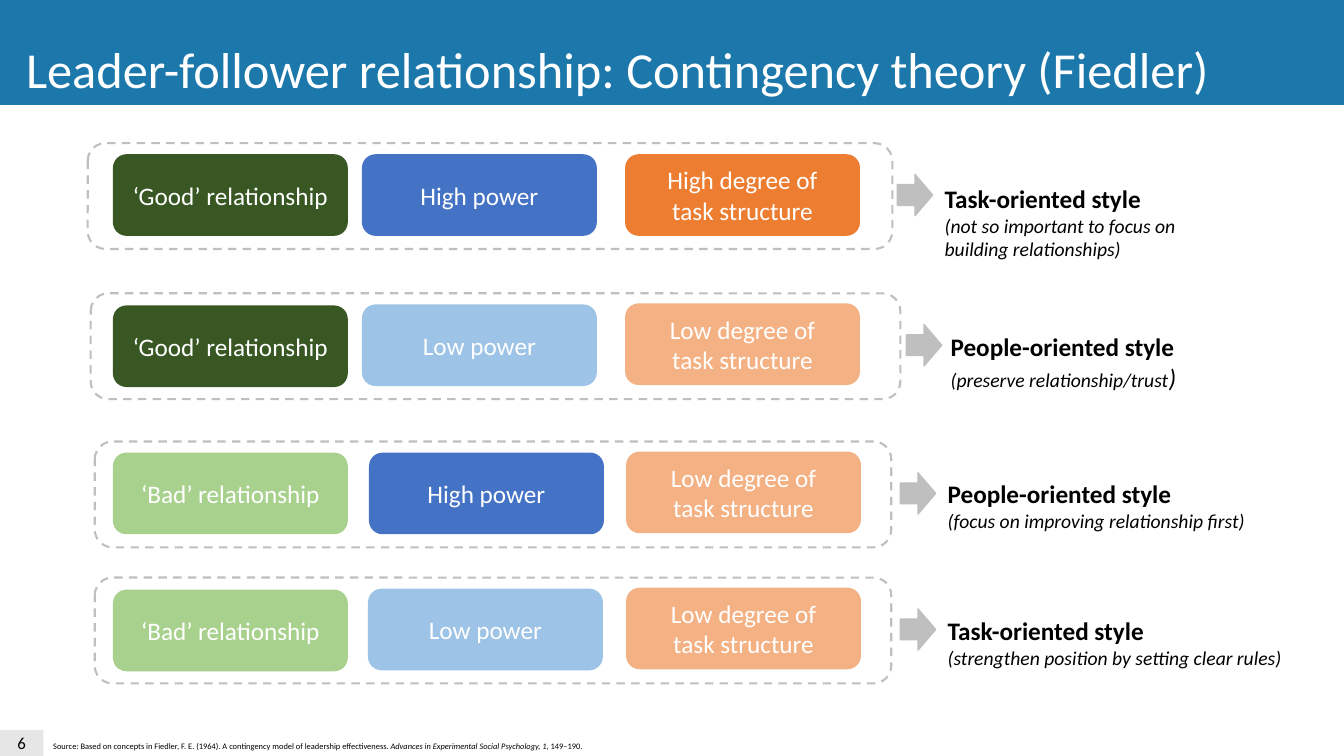
from copy import deepcopy
from typing import NamedTuple

from pptx import Presentation
from pptx.dml.color import RGBColor
from pptx.enum import dml, shapes, text
from pptx.util import Inches, Pt

FONT = "Calibri"
WHITE, BLACK, GREY = "FFFFFF", "000000", "BFBFBF"
KIND = shapes.MSO_SHAPE


class Run(NamedTuple):
    words: str
    size: float
    color: str = BLACK
    bold: bool = False
    slant: bool = False


class Box(NamedTuple):
    words: str
    fill: str
    left: float
    drop: float  # distance below the top of the dashed frame


class Row(NamedTuple):
    top: float
    left: float
    width: float
    arrow: float
    boxes: list[Box]
    note_at: tuple[float, float, float, float]
    note: list[list[Run]]


def rgb(code: str) -> RGBColor:
    return RGBColor.from_string(code)


def write(frame, paras: list[list[Run]], align=None) -> None:
    """Fill a text frame; a newline in a run becomes a line break."""
    for i, runs in enumerate(paras):
        para = frame.paragraphs[0] if i == 0 else frame.add_paragraph()
        if align is not None:
            para.alignment = align
        for item in runs:
            for j, line in enumerate(item.words.split("\n")):
                if j:
                    para.add_line_break()
                    para._p[-1].insert(0, deepcopy(run._r.rPr))
                if not line:
                    continue
                run = para.add_run()
                run.text = line
                font = run.font
                font.name, font.size = FONT, Pt(item.size)
                font.bold, font.italic = item.bold, item.slant
                font.color.rgb = rgb(item.color)


def label(tree, at: tuple, paras: list[list[Run]]) -> None:
    frame = tree.add_textbox(*map(Inches, at)).text_frame
    frame.word_wrap = False
    frame.auto_size = text.MSO_AUTO_SIZE.SHAPE_TO_FIT_TEXT
    write(frame, paras)


def block(tree, kind, at: tuple, fill: str | None = None,
          line: str | None = None, width: float = 1, run: Run | None = None):
    shape = tree.add_shape(kind, *map(Inches, at))
    shape.shadow.inherit = False
    if fill:
        shape.fill.solid()
        shape.fill.fore_color.rgb = rgb(fill)
    else:
        shape.fill.background()
    if line:
        shape.line.color.rgb = rgb(line)
        shape.line.width = Pt(width)
    else:
        shape.line.fill.background()
    if run:
        shape.text_frame.vertical_anchor = text.MSO_ANCHOR.MIDDLE
        write(shape.text_frame, [[run]], text.PP_ALIGN.CENTER)
    return shape


def draw(slide, row: Row) -> None:
    tree = slide.shapes.add_group_shape().shapes
    for box in row.boxes:
        block(tree, KIND.ROUNDED_RECTANGLE,
              (box.left, row.top + box.drop, 2.33, 0.81),
              box.fill, run=Run(box.words, 18, WHITE))
    frame = block(tree, KIND.ROUNDED_RECTANGLE,
                  (row.left, row.top, row.width, 1.05), line=GREY, width=1.5)
    frame.line.dash_style = dml.MSO_LINE.DASH
    block(tree, KIND.RIGHT_ARROW, (row.arrow, row.top + 0.31, 0.35, 0.41),
          GREY, GREY)
    label(tree, row.note_at, row.note)


def head(words: str) -> Run:
    return Run(words, 18, bold=True)


def hint(words: str, size: float = 14) -> Run:
    return Run(words, size, slant=True)


# Box kinds
def good(drop: float) -> Box:
    return Box("‘Good’ relationship", "385723", 1.12, drop)


def bad(drop: float) -> Box:
    return Box("‘Bad’ relationship", "A9D18E", 1.12, drop)


def strong(left: float, drop: float) -> Box:
    return Box("High power", "4472C4", left, drop)


def weak(left: float, drop: float) -> Box:
    return Box("Low power", "9DC3E6", left, drop)


def loose(left: float) -> Box:
    return Box("Low degree of\ntask structure", "F4B183", left, 0.1)


TASK, PEOPLE = "Task-oriented style", "People-oriented style"
ROWS = [
    Row(1.42, 0.87, 7.98, 8.9,
        [good(0.11), strong(3.59, 0.11),
         Box("High degree of\ntask structure", "ED7D31", 6.2, 0.11)],
        (9.27, 1.77, 2.51, 0.88),
        [[head(TASK + "\n"),
          hint("(not so important to focus on\nbuilding relationships)")]]),
    Row(2.91, 0.9, 8.03, 8.99,
        [good(0.12), weak(3.59, 0.11), loose(6.2)],
        (9.33, 3.24, 2.46, 0.71),
        [[head(PEOPLE + "\n"), hint("(preserve relationship/trust"),
          hint(")", 18)]]),
    Row(4.38, 0.94, 7.9, 8.93,
        [bad(0.11), strong(3.66, 0.11), loose(6.21)],
        (9.3, 4.7, 3.19, 0.64),
        [[head(PEOPLE)], [hint("(focus on improving relationship first)")]]),
    Row(5.73, 0.94, 7.9, 8.93,
        [bad(0.12), weak(3.65, 0.11), loose(6.21)],
        (9.3, 6.06, 3.56, 0.64),
        [[head(TASK)],
         [hint("(strengthen position by setting clear rules)")]]),
]


def main() -> None:
    deck = Presentation()
    deck.slide_width, deck.slide_height = Inches(13.33), Inches(7.5)
    slide = deck.slides.add_slide(deck.slide_layouts[6])
    tree = slide.shapes

    # Title band and page number
    block(tree, KIND.RECTANGLE, (0, -0.01, 13.34, 1.05), "1C78AB")
    block(tree, KIND.RECTANGLE, (0, 7.24, 0.43, 0.26), "E7E6E6",
          run=Run("6", 12))
    label(tree, (0.16, 0.33, 12.06, 0.71),
          [[Run("Leader-follower relationship: Contingency theory (Fiedler)",
                36, WHITE)]])

    # Source line
    label(tree, (0.43, 7.3, 5.54, 0.2),
          [[Run("Source: Based on concepts in Fiedler, F. E. (1964). "
                "A contingency model of leadership effectiveness. ", 6),
            hint("Advances in Experimental Social Psychology, 1", 6),
            Run(", 149–190.", 6)]])

    # Four situations and the style that suits each
    for row in ROWS:
        draw(slide, row)

    deck.save("out.pptx")


if __name__ == "__main__":
    main()
